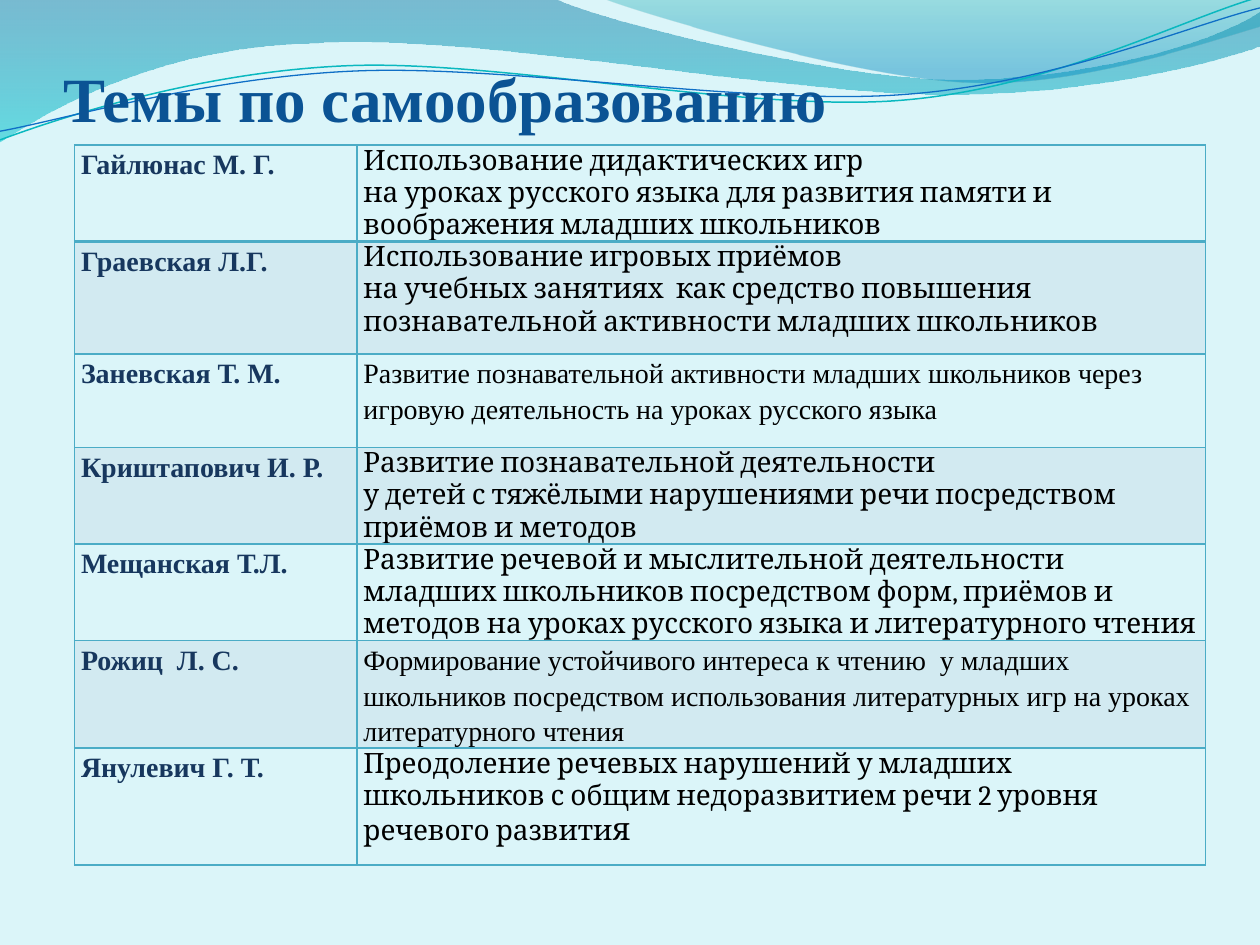
from lxml import etree
from pptx import Presentation
from pptx.dml.color import RGBColor
from pptx.enum import text
from pptx.oxml import ns
from pptx.util import Pt

BACKGROUND = RGBColor(0xDB, 0xF5, 0xF9)
TITLE_BLUE = RGBColor(0x0B, 0x53, 0x94)
NAME_BLUE = RGBColor(0x17, 0x37, 0x5E)
BLACK = RGBColor(0, 0, 0)
BAND = RGBColor(0xD2, 0xEA, 0xF1)
BORDER = RGBColor(0x4B, 0xAC, 0xC6)
WAVE_BLUE = RGBColor(0x00, 0x74, 0xA1)
WAVE_CYAN = RGBColor(0x00, 0xC6, 0xCF)
CREST_TEAL = RGBColor(0x00, 0xA1, 0xA9)
CREST_BLUE = RGBColor(0x00, 0x8B, 0xBF)
LINE_TEAL = RGBColor(0x0A, 0xB8, 0xBF)
LINE_BLUE = RGBColor(0x0F, 0x6F, 0xC6)
SERIF = "Times New Roman"
CAMBRIA = "Cambria"

presentation = Presentation()
presentation.slide_width, presentation.slide_height = Pt(720), Pt(540)
slide = presentation.slides.add_slide(presentation.slide_layouts[5])
slide.background.fill.solid()
slide.background.fill.fore_color.rgb = BACKGROUND


def add_wave(segments, closed):
    """Segments hold points: one for a straight line, three for a Bezier curve."""
    start, *points = [(x * 100, y * 100) for segment in segments for x, y in segment]
    builder = slide.shapes.build_freeform(*start, scale=Pt(0.01))
    builder.add_line_segments(points, close=closed)
    shape = builder.convert_to_shape()
    shape.shadow.inherit = False
    # Join each three straight steps of a curved segment into one Bezier
    steps = iter(list(shape._element.iter(ns.qn("a:lnTo"))))
    for segment in segments[1:]:
        first = next(steps)
        if len(segment) == 3:
            first.tag = ns.qn("a:cubicBezTo")
            for step in (next(steps), next(steps)):
                first.append(step[0])
                step.getparent().remove(step)
    return shape


# Translucent waves: outline, then gradient stops (position, colour, opacity in %)
waves = [
    ([[(0, 0)], [(317, -0.7)],
      [(343, 12), (478, 45), (546, 45.4)], [(614, 45.4), (690, 27), (720, 6.5)],
      [(720.7, 26)],
      [(708, 32), (626, 55), (537, 54)], [(448, 54), (275, 20), (185, 24.5)],
      [(93, 26), (33, 60), (-0.7, 81.4)]],
     [(0, WAVE_BLUE, 45), (1, WAVE_CYAN, 55)]),
    ([[(345, -0.7)],
      [(366.5, 8), (491, 44.6), (553.7, 46.8)], [(616.3, 49.7), (692, 23), (720, 15)],
      [(720, 0)]],
     [(0, CREST_TEAL, 30), (0.8, CREST_BLUE, 45)]),
]
for segments, stops in waves:
    wave = add_wave(segments, True)
    wave.line.fill.background()
    wave.fill.gradient()
    wave.fill.gradient_angle = 270
    for stop, (position, color, opacity) in zip(wave.fill.gradient_stops, stops):
        stop.position = position
        stop.color.rgb = color
    colors = wave._element.spPr.iter(ns.qn("a:srgbClr"))
    for color_element, (position, color, opacity) in zip(list(colors), stops):
        etree.SubElement(color_element, ns.qn("a:alpha"), val=str(opacity * 1000))

# Thin wavy lines, slightly tilted
wavy_lines = [
    ([[(-1.4, 63)], [(34.2, 51.7), (114.3, 29.4), (199.4, 30)],
      [(284.4, 30.5), (425.8, 67.2), (512, 64.7)],
      [(599.3, 62.3), (676.1, 25.9), (720.6, 15.5)]],
     LINE_TEAL, 0.85),
    ([[(-1.1, 58)], [(33.2, 53.6), (118.2, 32.6), (204.2, 33.2)],
      [(290.3, 33.7), (429.1, 63.8), (515.3, 61.4)],
      [(601.4, 59.4), (678.9, 30), (721.4, 21.5)]],
     LINE_BLUE, 0.75),
]
for segments, color, width in wavy_lines:
    curve = add_wave(segments, False)
    curve.rotation = 357.3
    curve.fill.background()
    curve.line.color.rgb = color
    curve.line.width = Pt(width)

# Title, brought in front of the waves
title = slide.shapes.title
slide.shapes._spTree.append(title._element)
title.left, title.top, title.width, title.height = Pt(36), Pt(21.6), Pt(648), Pt(55.4)
frame = title.text_frame
frame.text = "Темы по самообразованию"
frame.word_wrap = True
frame.auto_size = text.MSO_AUTO_SIZE.NONE
frame.vertical_anchor = text.MSO_ANCHOR.BOTTOM
frame.margin_left = frame.margin_right = frame.margin_bottom = 0
frame.margin_top = Pt(3.6)
paragraph = frame.paragraphs[0]
paragraph.alignment = text.PP_ALIGN.LEFT
font = paragraph.runs[0].font
font.name, font.size, font.bold = SERIF, Pt(36), True
font.color.rgb = TITLE_BLUE

# Table rows: height, teacher, topic font, topic paragraphs
rows = [
    (40.3, "Гайлюнас М. Г.", CAMBRIA,
     ["Использование дидактических игр",
      "на уроках русского языка для развития памяти и воображения младших школьников"]),
    (64.2, "Граевская Л.Г.", CAMBRIA,
     ["Использование игровых приёмов",
      "на учебных занятиях  как средство повышения познавательной активности младших школьников"]),
    (53.6, "Заневская Т. М.", SERIF,
     ["Развитие познавательной активности младших школьников через игровую деятельность "
      "на уроках русского языка"]),
    (53.6, "Криштапович И. Р.", CAMBRIA,
     ["Развитие познавательной деятельности",
      "у детей с тяжёлыми нарушениями речи посредством приёмов и методов"]),
    (53.6, "Мещанская Т.Л.", CAMBRIA,
     ["Развитие речевой и мыслительной деятельности",
      "младших школьников посредством форм, приёмов и методов на уроках русского языка "
      "и литературного чтения"]),
    (53.6, "Рожиц  Л. С.", SERIF,
     ["Формирование устойчивого интереса к чтению  у младших школьников посредством "
      "использования литературных игр на уроках литературного чтения"]),
    (67, "Янулевич Г. Т.", CAMBRIA,
     ["Преодоление речевых нарушений у младших школьников с общим недоразвитием речи "
      "2 уровня речевого развити"]),
]
table_shape = slide.shapes.add_table(len(rows), 2, Pt(42.7), Pt(82.9), Pt(646.2), Pt(424))
table = table_shape.table
table.first_row = table.horz_banding = False
table.columns[0].width, table.columns[1].width = Pt(161.4), Pt(484.8)

for row_index, (height, teacher, topic_font, topic) in enumerate(rows):
    table.rows[row_index].height = Pt(height)
    columns = [([teacher], SERIF, NAME_BLUE, True), (topic, topic_font, BLACK, False)]
    for column_index, (lines, font_name, color, bold) in enumerate(columns):
        cell = table.cell(row_index, column_index)
        cell.margin_left = cell.margin_right = Pt(3.6)
        cell.margin_top = cell.margin_bottom = 0
        cell.text_frame.text = "\n".join(lines)
        for paragraph in cell.text_frame.paragraphs:
            if font_name == SERIF:
                paragraph.line_spacing = 1.15
            font = paragraph.runs[0].font
            font.name, font.size, font.bold = font_name, Pt(16), bold
            font.color.rgb = color
        if row_index % 2:
            cell.fill.solid()
            cell.fill.fore_color.rgb = BAND
        else:
            cell.fill.background()
        # Borders, heavier below the first row
        heavy_side = {0: "lnB", 1: "lnT"}.get(row_index)
        properties = cell._tc.get_or_add_tcPr()
        for index, side in enumerate(("lnL", "lnR", "lnT", "lnB")):
            width = Pt(2.25 if side == heavy_side else 1)
            border = etree.Element(ns.qn("a:" + side), w=str(int(width)))
            fill = etree.SubElement(border, ns.qn("a:solidFill"))
            etree.SubElement(fill, ns.qn("a:srgbClr"), val=str(BORDER))
            properties.insert(index, border)

# The last letter of the last topic is larger
run = table.cell(len(rows) - 1, 1).text_frame.paragraphs[0].add_run()
run.text = "я"
run.font.name, run.font.size, run.font.bold = CAMBRIA, Pt(18), False
run.font.color.rgb = BLACK

presentation.save("out.pptx")
